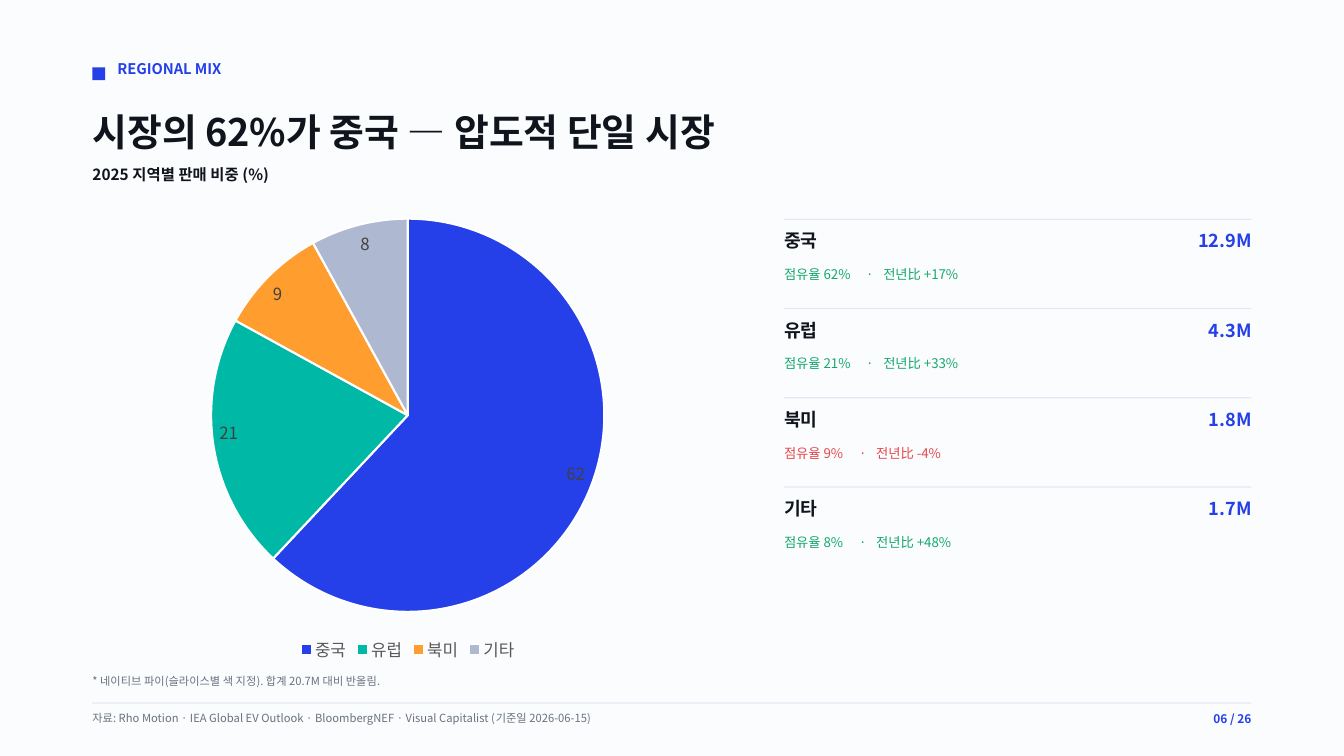
import pptx
import pptx.chart.data
import pptx.dml.color
import pptx.enum.chart
import pptx.enum.shapes
import pptx.enum.text
import pptx.util
import lxml.etree

Cm, Pt = pptx.util.Cm, pptx.util.Pt
ALIGN = pptx.enum.text.PP_ALIGN

# Content
LABEL = "REGIONAL MIX"
TITLE = "시장의 62%가 중국 — 압도적 단일 시장"
SUB = "2025 지역별 판매 비중 (%)"
NOTE = "* 네이티브 파이(슬라이스별 색 지정). 합계 20.7M 대비 반올림."
SOURCE = ("자료: Rho Motion · IEA Global EV Outlook · BloombergNEF · "
          "Visual Capitalist (기준일 2026-06-15)")
PAGE = "06 / 26"
# Region, share in percent, sales, growth in percent, slice colour
REGIONS = [
    ("중국", 62, "12.9M", 17, "2540E8"),
    ("유럽", 21, "4.3M", 33, "00B8A6"),
    ("북미", 9, "1.8M", -4, "FF9D2E"),
    ("기타", 8, "1.7M", 48, "AEB8D0"),
]

# Style and grid (cm)
FACE = "Noto Sans CJK KR"
INK, BLUE, GREY, RULE = "10141C", "2540E8", "69727E", "E3E8F2"
UP, DOWN = "15A86B", "E5484D"
LEFT, WIDE = 2.33, 29.21
RIGHT = LEFT + WIDE
COL, TOP, STEP = 19.76, 5.51, 2.25
SPAN = RIGHT - COL


def rgb(code):
    return pptx.dml.color.RGBColor.from_string(code)


def style(font, size, color, bold=False):
    font.size, font.bold, font.name = Pt(size), bold, FACE
    font.color.rgb = rgb(color)
    ea = lxml.etree.SubElement(font._element, pptx.oxml.ns.qn("a:ea"))
    ea.set("typeface", FACE)


def fill(frame, words, size, color, bold=False, align=ALIGN.LEFT, tabs=()):
    frame.margin_left = frame.margin_right = 0
    frame.margin_top = frame.margin_bottom = 0
    frame.word_wrap = True
    frame.vertical_anchor = pptx.enum.text.MSO_ANCHOR.TOP
    frame.auto_size = pptx.enum.text.MSO_AUTO_SIZE.SHAPE_TO_FIT_TEXT
    frame.text = words
    para = frame.paragraphs[0]
    para.alignment = align
    if tabs:
        stops = lxml.etree.SubElement(para._p.get_or_add_pPr(),
                                      pptx.oxml.ns.qn("a:tabLst"))
        for pos in tabs:
            lxml.etree.SubElement(stops, pptx.oxml.ns.qn("a:tab"),
                                  pos=str(Cm(pos)), algn="l")
    style(para.font, size, color, bold)


def text(x, y, w, h, words, *look, **more):
    box = slide.shapes.add_textbox(Cm(x), Cm(y), Cm(w), Cm(h))
    fill(box.text_frame, words, *look, **more)


def block(x, y, w, h, color):
    shape = slide.shapes.add_shape(pptx.enum.shapes.MSO_SHAPE.RECTANGLE,
                                   Cm(x), Cm(y), Cm(w), Cm(h))
    shape.shadow.inherit = False
    shape.fill.solid()
    shape.fill.fore_color.rgb = rgb(color)
    shape.line.fill.background()


# Slide
deck = pptx.Presentation()
deck.slide_width, deck.slide_height = Cm(33.87), Cm(19.05)
slide = deck.slides.add_slide(deck.slide_layouts[5])
slide.background.fill.solid()
slide.background.fill.fore_color.rgb = rgb("FBFCFE")

# Heading
block(LEFT, 1.7, 0.32, 0.32, BLUE)
text(2.96, 1.52, 4, 0.46, LABEL, 10.5, BLUE, True)
title = slide.shapes.title
title.left, title.top = Cm(LEFT), Cm(2.75)
title.width, title.height = Cm(WIDE), Cm(1.14)
fill(title.text_frame, TITLE, 27, INK, True)
text(LEFT, 4.17, 19.05, 0.48, SUB, 11, INK, True)

# Region rows
for i, (name, share, sales, growth, _) in enumerate(REGIONS):
    y = TOP + i * STEP
    dot = 2.07 if share >= 10 else 1.89
    block(COL, y, SPAN, 0.03, RULE)
    text(COL, y + 0.28, 8.6, 0.56, name, 13, INK, True)
    text(COL, y + 0.28, SPAN, 0.56, sales, 13, BLUE, True, ALIGN.RIGHT)
    text(COL, y + 1.2, SPAN, 0.41, f"점유율 {share}%\t·\t전년比 {growth:+d}%",
         9.5, UP if growth > 0 else DOWN, tabs=(dot, dot + 0.43))

# Footer
text(LEFT, 16.99, WIDE, 0.34, NOTE, 8, GREY)
block(LEFT, 17.7, WIDE, 0.03, RULE)
text(LEFT, 17.93, 27.1, 0.34, SOURCE, 8, GREY)
text(RIGHT - 2.12, 17.93, 2.12, 0.36, PAGE, 8.5, BLUE, True, ALIGN.RIGHT)

# Pie chart
data = pptx.chart.data.CategoryChartData()
data.categories = [row[0] for row in REGIONS]
data.add_series("Series 1", [row[1] for row in REGIONS])
chart = slide.shapes.add_chart(pptx.enum.chart.XL_CHART_TYPE.PIE, Cm(1.98),
                               Cm(5.16), Cm(16.59), Cm(11.63), data).chart
style(chart.font, 10, "000000")
chart.has_title = False
chart.has_legend = True
chart.legend.position = pptx.enum.chart.XL_LEGEND_POSITION.BOTTOM
chart.legend.include_in_layout = False
style(chart.legend.font, 12, "595959")
pie = chart.plots[0]
pie.vary_by_categories = True
pie.has_data_labels = True
tags = pie.data_labels
tags.show_value, tags.show_percentage = True, False
tags.position = pptx.enum.chart.XL_LABEL_POSITION.INSIDE_END
style(tags.font, 12, "404040")
for i, row in enumerate(REGIONS):
    part = pie.series[0].points[i].format
    part.fill.solid()
    part.fill.fore_color.rgb = rgb(row[4])
    part.line.color.rgb = rgb("FFFFFF")
    part.line.width = Pt(1.5)

deck.save("out.pptx")
